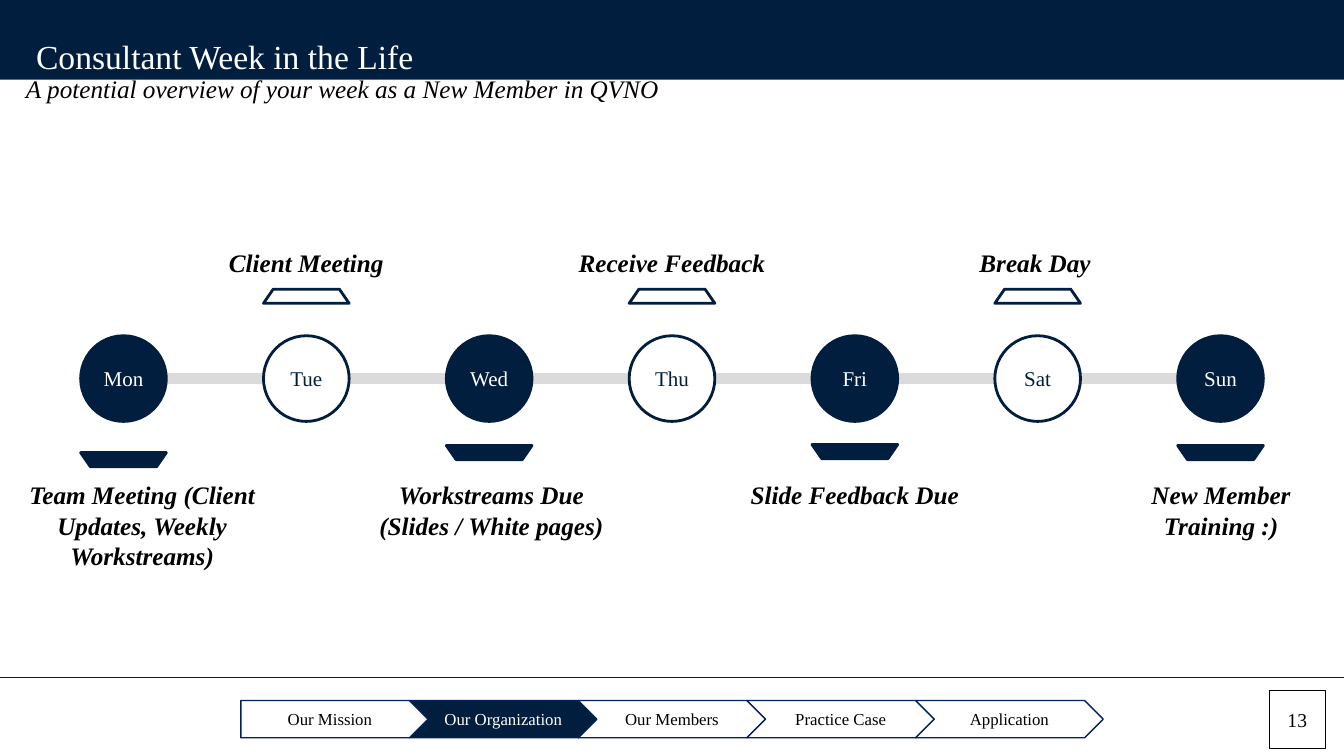
from dataclasses import dataclass

from lxml import etree
from pptx import Presentation
from pptx.dml.color import RGBColor
from pptx.enum.shapes import MSO_CONNECTOR, MSO_SHAPE
from pptx.enum.text import MSO_ANCHOR, PP_ALIGN
from pptx.oxml.ns import qn
from pptx.util import Pt

RECTANGLE, OVAL = MSO_SHAPE.RECTANGLE, MSO_SHAPE.OVAL
TRAPEZOID = MSO_SHAPE.TRAPEZOID
PENTAGON, CHEVRON = MSO_SHAPE.PENTAGON, MSO_SHAPE.CHEVRON
STRAIGHT = MSO_CONNECTOR.STRAIGHT
LEFT, CENTER = PP_ALIGN.LEFT, PP_ALIGN.CENTER
TOP, MIDDLE = MSO_ANCHOR.TOP, MSO_ANCHOR.MIDDLE


@dataclass(frozen=True)
class Theme:
    font: str = "Times New Roman"
    header: str = "021E3E"
    navy: str = "011E3E"
    outline: str = "002060"
    track: str = "DBDBDB"
    white: str = "FFFFFF"
    black: str = "000000"
    title_size: float = 24
    label_size: float = 18
    day_size: float = 15
    number_size: float = 14
    nav_size: float = 12


THEME = Theme()
PAGE_WIDTH, PAGE_HEIGHT = 960, 540

# Timeline geometry
FIRST_CENTER, DAY_STEP = 88.2, 130.6
CIRCLE_TOP, CIRCLE_SIZE = 239.8, 61.2
TAG_HEIGHT, UPPER_TAG_TOP = 10.1, 206.6
UPPER_LABEL_TOP, LOWER_LABEL_TOP = 172.8, 339.1

# Day, label, label centre, label width, top of the tag
DAYS = [
    ("Mon", "Team Meeting (Client Updates, Weekly Workstreams)", 101.6, 203.2, 323.3),
    ("Tue", "Client Meeting", 218.8, 204.5, UPPER_TAG_TOP),
    ("Wed", "Workstreams Due (Slides / White pages)", 351, 186.5, 318.2),
    ("Thu", "Receive Feedback", 480, 204.5, UPPER_TAG_TOP),
    ("Fri", "Slide Feedback Due", 610.6, 204.5, 317.5),
    ("Sat", "Break Day", 739.4, 204.5, UPPER_TAG_TOP),
    ("Sun", "New Member Training :)", 872.2, 165, 318.2),
]

# Footer navigation
SECTIONS = ["Our Mission", "Our Organization", "Our Members", "Practice Case", "Application"]
CURRENT_SECTION = "Our Organization"
NAV_LEFT, NAV_STEP, NAV_TOP = 172.1, 120.5, 500.4
NAV_WIDTH, NAV_HEIGHT = 133.9, 26.6


def color(value):
    return RGBColor.from_string(value)


def write(shape, text, size, ink=THEME.black, align=CENTER, anchor=MIDDLE,
          bold=False, italic=False, spacing=1.0):
    frame = shape.text_frame
    frame.word_wrap = True
    frame.vertical_anchor = anchor
    para = frame.paragraphs[0]
    para.alignment = align
    para.line_spacing = spacing
    span = para.add_run()
    span.text = text
    span.font.name = THEME.font
    span.font.size = Pt(size)
    span.font.color.rgb = color(ink)
    span.font.bold = bold
    span.font.italic = italic


def add_text(page, left, top, width, height, text, size, **style):
    box = page.shapes.add_textbox(Pt(left), Pt(top), Pt(width), Pt(height))
    write(box, text, size, **style)


def add_block(page, kind, left, top, width, height, fill, line=None, weight=2):
    block = page.shapes.add_shape(kind, Pt(left), Pt(top), Pt(width), Pt(height))
    block.shadow.inherit = False
    block.fill.solid()
    block.fill.fore_color.rgb = color(fill)
    if line is None:
        block.line.fill.background()
    else:
        block.line.color.rgb = color(line)
        block.line.width = Pt(weight)
    return block


def add_rule(page, top):
    rule = page.shapes.add_connector(STRAIGHT, Pt(0), Pt(top), Pt(PAGE_WIDTH), Pt(top))
    rule.line.color.rgb = color(THEME.header)
    rule.line.width = Pt(1)
    etree.SubElement(rule._element.spPr, qn("a:effectLst"))


def add_header(page):
    add_block(page, RECTANGLE, 0, 0, PAGE_WIDTH, 56.9, THEME.header)
    add_text(page, 18.7, 25.2, 676, 34.6, "Consultant Week in the Life",
             THEME.title_size, ink=THEME.white, align=LEFT, anchor=TOP, spacing=0.9)
    add_text(page, 11.5, 54.7, 640, 20.2,
             "A potential overview of your week as a New Member in QVNO",
             THEME.label_size, align=LEFT, italic=True, spacing=0.9)


def add_day(page, center, lower, day, label, label_center, label_width, tag_top):
    fill, ink = (THEME.navy, THEME.white) if lower else (THEME.white, THEME.navy)
    left = center - CIRCLE_SIZE / 2
    circle = add_block(page, OVAL, left, CIRCLE_TOP, CIRCLE_SIZE, CIRCLE_SIZE,
                       fill, THEME.navy)
    write(circle, day, THEME.day_size, ink=ink)
    tag = add_block(page, TRAPEZOID, left, tag_top, CIRCLE_SIZE, TAG_HEIGHT,
                    fill, THEME.navy)
    tag.adjustments[0] = 0.69
    tag.rotation = 180 if lower else 0
    label_top, label_height = (LOWER_LABEL_TOP, 51) if lower else (UPPER_LABEL_TOP, 29)
    add_text(page, label_center - label_width / 2, label_top, label_width, label_height,
             label, THEME.label_size, anchor=TOP, bold=True, italic=True)


def add_timeline(page):
    add_block(page, RECTANGLE, 101.5, 267.1, 753.1, 6.5, THEME.track, THEME.track)
    for index, entry in enumerate(DAYS):
        add_day(page, FIRST_CENTER + index * DAY_STEP, index % 2 == 0, *entry)


def add_footer(page):
    add_rule(page, 483.8)
    for index, section in enumerate(SECTIONS):
        current = section == CURRENT_SECTION
        step = add_block(page, CHEVRON if index else PENTAGON,
                         NAV_LEFT + index * NAV_STEP, NAV_TOP, NAV_WIDTH, NAV_HEIGHT,
                         THEME.navy if current else THEME.white, THEME.outline, 1)
        write(step, section, THEME.nav_size, ink=THEME.white if current else THEME.black)
    number = add_block(page, RECTANGLE, 906.5, 493.2, 40.3, 41.8,
                       THEME.white, THEME.black, 0.75)
    write(number, "13", THEME.number_size)


def main():
    deck = Presentation()
    deck.slide_width, deck.slide_height = Pt(PAGE_WIDTH), Pt(PAGE_HEIGHT)
    page = deck.slides.add_slide(deck.slide_layouts[6])
    add_header(page)
    add_timeline(page)
    add_footer(page)
    deck.save("out.pptx")


if __name__ == "__main__":
    main()
